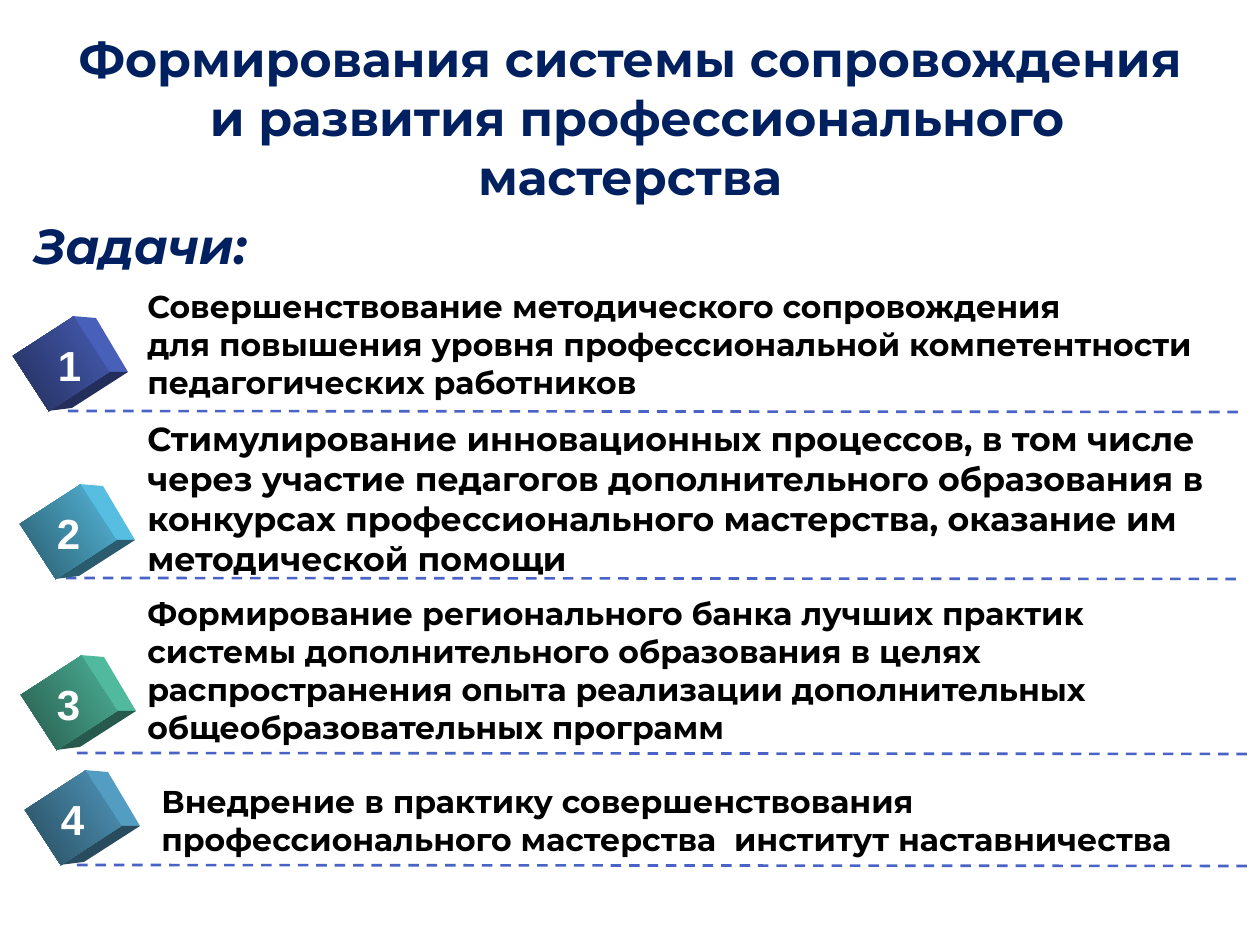
"""Build the slide listing four numbered tasks for developing professional skill."""
from dataclasses import dataclass

from lxml import etree
from pptx import Presentation
from pptx import util as u
from pptx.dml.color import RGBColor
from pptx.enum import dml, shapes, text
from pptx.oxml.ns import qn

SCALE = 914400 / 126


@dataclass(frozen=True)
class Theme:
    navy: str = "002060"
    black: str = "000000"
    white: str = "FFFFFF"
    dash: str = "4963C7"
    main: str = "Montserrat"
    digit: str = "Arial"
    head: int = 28
    num: int = 24
    rule: float = 1.5
    light: float = 0.93
    front: float = 0.9
    dark: float = 0.45


@dataclass(frozen=True)
class Task:
    lines: str
    box: tuple[int, int, int, int]
    cube: tuple[int, int]
    num: int
    rule: tuple[int, int]
    tint: str
    size: int = 18


THEME = Theme()
SIDE = ((44, -12), (68, -10), (100, 44), (80, 44))
BASE = ((80, 44), (100, 44), (44, 80), (20, 83))
TASKS = (
    Task("Совершенствование методического сопровождения\n"
         "для повышения уровня профессиональной компетентности педагогических работников",
         (135, 281, 1107, 127), (28, 328), 45, (68, 411), "4E67C8"),
    Task("Стимулирование инновационных процессов, в том числе через участие педагогов "
         "дополнительного образования в конкурсах профессионального мастерства, "
         "оказание им методической помощи",
         (135, 412, 1107, 174), (35, 496), 44, (66, 578), "5ECCF3", 19),
    Task("Формирование регионального банка лучших практик системы дополнительного "
         "образования в целях распространения опыта реализации дополнительных "
         "общеобразовательных программ",
         (135, 588, 1107, 165), (36, 667), 44, (77, 753), "56C7AA"),
    Task("Внедрение в практику совершенствования профессионального мастерства  "
         "институт наставничества",
         (149, 776, 1107, 89), (40, 782), 48, (77, 865), "59A8D1"),
)


def px(*vals: int) -> list[int]:
    """Turn pixels into EMU."""
    return [round(v * SCALE) for v in vals]


def shade(tint: str, part: float) -> RGBColor:
    """Darken a colour to a part of its brightness."""
    return RGBColor(*(round(c * part) for c in RGBColor.from_string(tint)))


def write(frame, words: str, size: int, tint: str, face: str,
          align=text.PP_ALIGN.LEFT, slant: bool = False) -> None:
    """Set bold text in a frame and format its runs."""
    frame.text = words
    frame.auto_size = text.MSO_AUTO_SIZE.NONE
    for para in frame.paragraphs:
        para.alignment = align
        for run in para.runs:
            font = run.font
            font.name, font.size = face, u.Pt(size)
            font.bold, font.italic = True, slant
            font.color.rgb = RGBColor.from_string(tint)


def label(slide, box: tuple, words: str, size: int, tint: str, face: str,
          wrap: bool = False, **style) -> None:
    """Add a text box."""
    frame = slide.shapes.add_textbox(*px(*box)).text_frame
    write(frame, words, size, tint, face, **style)
    frame.word_wrap = wrap


def facet(slide, task: Task, ring: tuple, part: float) -> None:
    """Draw one outer face of a cube."""
    left, top = task.cube
    pts = [(left + x, top + y) for x, y in ring]
    pen = slide.shapes.build_freeform(*pts[0], scale=SCALE)
    pen.add_line_segments(pts[1:], close=True)
    face = pen.convert_to_shape()
    face.shadow.inherit = False
    face.fill.solid()
    face.fill.fore_color.rgb = shade(task.tint, part)
    face.line.fill.background()


def cube(slide, task: Task, num: int) -> None:
    """Draw a tilted cube with its number."""
    facet(slide, task, SIDE, THEME.light)
    facet(slide, task, BASE, THEME.dark)
    front = slide.shapes.add_shape(shapes.MSO_SHAPE.RECTANGLE, *px(*task.cube, 66, 72))
    front.rotation = 57
    front.shadow.inherit = False
    front.line.fill.background()
    front.fill.gradient()
    front.fill.gradient_angle = 270
    for stop, part in zip(front.fill.gradient_stops, (THEME.front, THEME.dark)):
        stop.color.rgb = shade(task.tint, part)
    label(slide, (task.num, task.cube[1] + 5, 49, 63), str(num), THEME.num,
          THEME.white, THEME.digit, align=text.PP_ALIGN.CENTER)


def rule(slide, left: int, top: int) -> None:
    """Draw a dashed line below a task."""
    line = slide.shapes.add_connector(
        shapes.MSO_CONNECTOR.STRAIGHT, *px(left, top, left + 1174, top + 1))
    line.line.color.rgb = RGBColor.from_string(THEME.dash)
    line.line.width = u.Pt(THEME.rule)
    line.line.dash_style = dml.MSO_LINE.DASH
    etree.SubElement(line._element.spPr, qn("a:effectLst"))


def main() -> None:
    """Build and save the slide."""
    deck = Presentation()
    deck.slide_width, deck.slide_height = px(1260, 945)
    slide = deck.slides.add_slide(deck.slide_layouts[5])
    title = slide.shapes.title
    title.left, title.top, title.width, title.height = px(63, 38, 1134, 158)
    write(title.text_frame,
          "Формирования системы сопровождения\v и развития профессионального мастерства",
          THEME.head, THEME.navy, THEME.main, text.PP_ALIGN.CENTER)
    title.text_frame.vertical_anchor = text.MSO_ANCHOR.MIDDLE
    label(slide, (21, 209, 242, 72), "Задачи:", THEME.head, THEME.navy,
          THEME.main, slant=True)
    for num, task in enumerate(TASKS, 1):
        label(slide, task.box, task.lines, task.size, THEME.black, THEME.main, wrap=True)
        rule(slide, *task.rule)
        cube(slide, task, num)
    deck.save("out.pptx")


if __name__ == "__main__":
    main()
